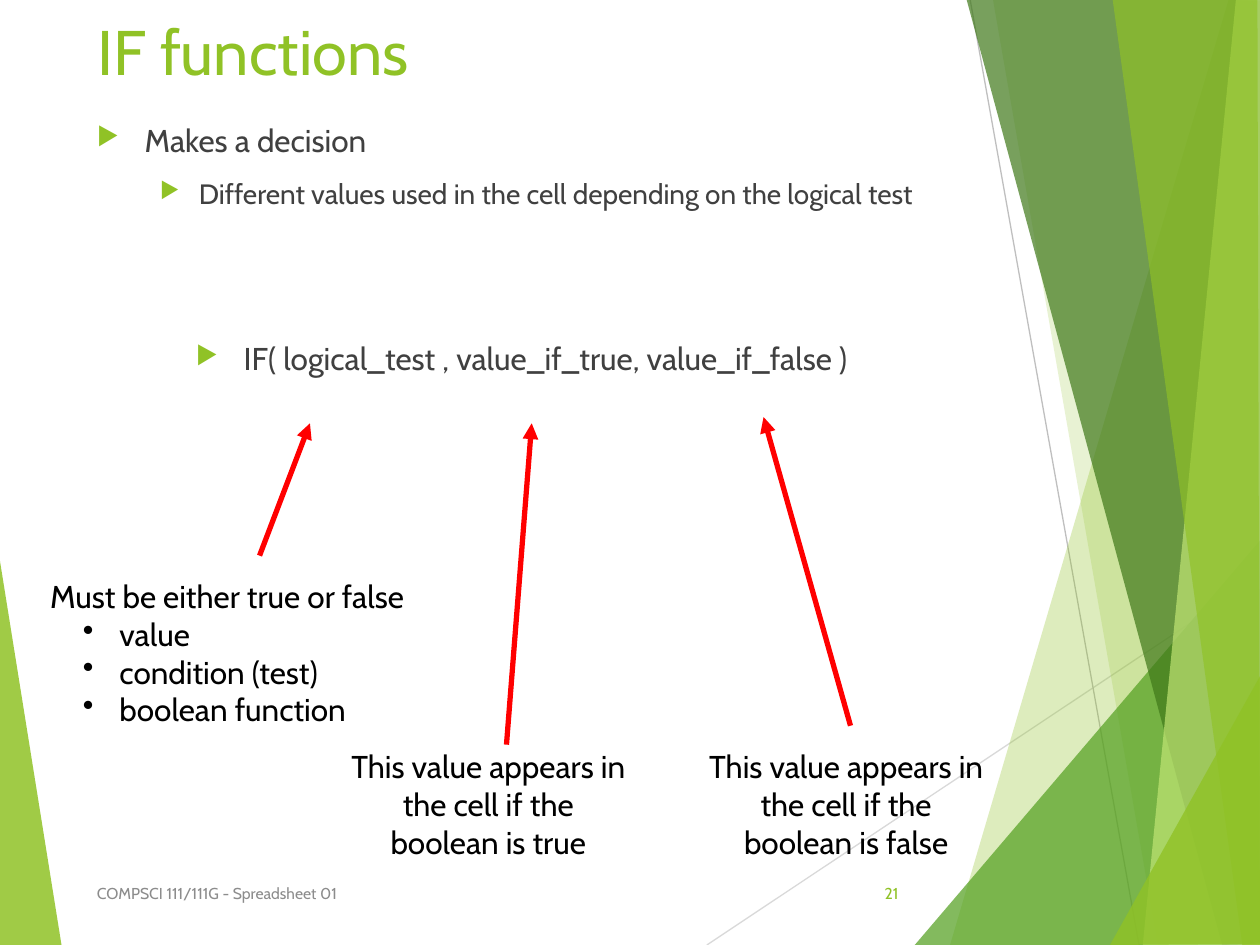
from lxml.etree import SubElement
from pptx import Presentation
from pptx.dml.color import RGBColor
from pptx.enum.shapes import MSO_CONNECTOR
from pptx.enum.text import MSO_ANCHOR, MSO_AUTO_SIZE, PP_ALIGN
from pptx.oxml.ns import qn
from pptx.util import Pt

PX = 9144  # EMU per px, 100 px to the inch


class Theme:
    font = "Cabin"
    lime, green, dark, pale = "90C226", "54A021", "3F7819", "C0E474"
    text, black, grey, red = "404040", "000000", "8C8C8C", "FF0000"
    rule, rule_light = "BFBFBF", "D9D9D9"
    title, main, sub, small = 36, 18, 16, 9


def write(box, paras, anchor=MSO_ANCHOR.TOP, wrap=True):
    """Fill a box with (text, size, colour, format dict, bullet) paragraphs."""
    frame = box.text_frame
    frame.word_wrap = wrap
    frame.auto_size = MSO_AUTO_SIZE.NONE
    frame.vertical_anchor = anchor
    for i, (text, size, color, form, bullet) in enumerate(paras):
        para = frame.add_paragraph() if i else frame.paragraphs[0]
        for name, value in form.items():
            setattr(para, name, value)
        if bullet:
            char, left, hang, tint = bullet
            props = para._p.get_or_add_pPr()
            props.set("marL", str(left * PX))
            props.set("indent", str(-hang * PX))
            if tint:
                shade = SubElement(props, qn("a:buClr"))
                SubElement(shade, qn("a:srgbClr")).set("val", tint)
                SubElement(props, qn("a:buSzPct")).set("val", "80000")
            SubElement(props, qn("a:buChar")).set("char", char)
        run = para.add_run()
        run.text = text
        for name, value in {"name": Theme.font, "size": Pt(size)}.items():
            setattr(run.font, name, value)
        run.font.color.rgb = RGBColor.from_string(color)


def draw_line(ends, color, width, arrow=False):
    line = slide.shapes.add_connector(
        MSO_CONNECTOR.STRAIGHT, *[n * PX for n in ends])
    line.line.color.rgb = RGBColor.from_string(color)
    line.line.width = Pt(width)
    if arrow:
        SubElement(line.line._get_or_add_ln(), qn("a:tailEnd")).set("type", "triangle")
    SubElement(line._element.spPr, qn("a:effectLst"))


deck = Presentation()
deck.slide_width, deck.slide_height = 1000 * PX, 750 * PX
slide = deck.slides.add_slide(deck.slide_layouts[5])

# Background rules
draw_line((561, 750, 1001, 457), Theme.rule_light, 0.75)
draw_line((770, 0, 904, 750), Theme.rule, 0.75)

# Background facets: colour, opacity in percent, corners
facets = [
    (Theme.lime, 85, [(-1, 439), (49, 751), (-1, 750)]),
    (Theme.lime, 30, [(975, 0), (754, 750), (1002, 751), (1001, 1)]),
    (Theme.lime, 20, [(788, -1), (919, 750), (1001, 750), (1001, -1)]),
    (Theme.green, 72, [(726, 750), (1000, 429), (1001, 750)]),
    (Theme.dark, 70, [(767, -1), (970, 750), (1001, 749), (1001, -1)]),
    (Theme.pale, 70, [(981, -1), (907, 750), (1001, 750), (1000, -1)]),
    (Theme.lime, 65, [(883, -1), (986, 750), (1000, 750), (998, -1)]),
    (Theme.lime, 80, [(881, 750), (1001, 535), (1001, 749)]),
]
for color, alpha, points in facets:
    path = slide.shapes.build_freeform(*points[0], scale=PX)
    path.add_line_segments(points[1:], close=True)
    facet = path.convert_to_shape()
    facet.shadow.inherit = False
    facet.line.fill.background()
    facet.fill.solid()
    facet.fill.fore_color.rgb = RGBColor.from_string(color)
    tone = facet._element.spPr.find(".//" + qn("a:srgbClr"))
    SubElement(tone, qn("a:alpha")).set("val", str(alpha * 1000))

# Title
title = slide.shapes.title
for name, value in {"left": 67, "top": 5, "width": 694, "height": 76}.items():
    setattr(title, name, value * PX)
write(title, [("IF functions", Theme.title, Theme.lime,
               {"alignment": PP_ALIGN.LEFT}, None)])

# Text boxes: place, paragraphs, anchor, wrap
plain, center = {}, {"alignment": PP_ALIGN.CENTER}
mark = ("▶", 38, 38, Theme.lime)
dot = ("•", 55, 29, None)
body = [
    ("Makes a decision", Theme.main, Theme.text, plain, mark),
    ("Different values used in the cell depending on the logical test",
     Theme.sub, Theme.text, {"level": 1, "space_before": Pt(10)},
     ("▶", 81, 31, Theme.lime)),
    ("IF( logical_test , value_if_true, value_if_false )",
     Theme.main, Theme.text, {**center, "space_before": Pt(74)}, mark),
]
test = [("Must be either true or false", Theme.main, Theme.black, plain, None)]
for item in ("value", "condition (test)", "boolean function"):
    test.append((item, Theme.main, Theme.black, {"level": 1}, dot))
footer = [("COMPSCI 111/111G - Spreadsheet 01", Theme.small, Theme.grey, plain, None)]
number = [("21", Theme.small, Theme.lime, {"alignment": PP_ALIGN.RIGHT}, None)]
boxes = [
    ((67, 91, 694, 578), body, MSO_ANCHOR.TOP, True),
    ((67, 689, 506, 40), footer, MSO_ANCHOR.MIDDLE, True),
    ((667, 689, 56, 40), number, MSO_ANCHOR.MIDDLE, True),
    ((30, 453, 317, 130), test, MSO_ANCHOR.TOP, False),
]
for left, case in ((265, "true"), (549, "false")):
    note = f"This value appears in the cell if the boolean is {case}"
    boxes.append(((left, 588, 245, 100),
                  [(note, Theme.main, Theme.black, center, None)],
                  MSO_ANCHOR.TOP, True))
for place, paras, anchor, wrap in boxes:
    box = slide.shapes.add_textbox(*[n * PX for n in place])
    write(box, paras, anchor, wrap)

# Arrows from the notes to the arguments
for ends in ((206, 441, 246, 336), (402, 591, 422, 336), (675, 576, 606, 331)):
    draw_line(ends, Theme.red, 3, arrow=True)

deck.save("out.pptx")
